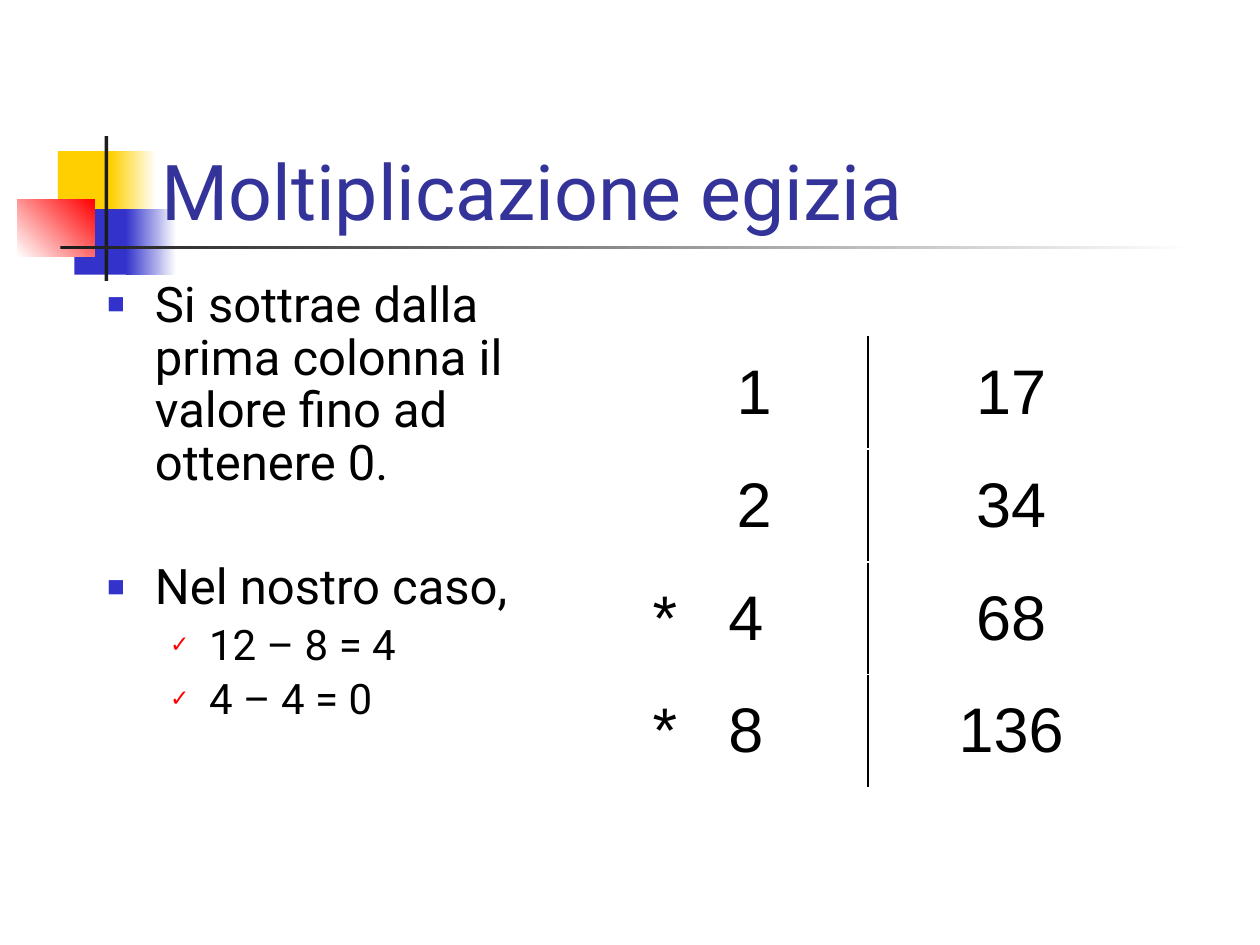
from dataclasses import dataclass
from typing import Optional

from lxml import etree
from pptx import Presentation
from pptx import util as u
from pptx.dml.color import RGBColor
from pptx.enum import shapes, text
from pptx.oxml import ns


@dataclass(frozen=True)
class Theme:
    title: str = "333399"
    ink: str = "000000"
    paper: str = "FFFFFF"
    yellow: str = "FFCF01"
    blue: str = "3333CC"
    red: str = "FF0000"
    dark: str = "1C1C1C"
    font: str = "Roboto"
    table_font: str = "Arial"
    title_size: int = 44
    body_size: int = 28
    sub_size: int = 24
    table_size: int = 36


T = Theme()


@dataclass(frozen=True)
class Block:
    left: float
    top: float
    width: float
    height: float
    color: str
    fade_to: Optional[str] = None
    angle: int = 0


@dataclass(frozen=True)
class Level:
    size: int
    indent: float
    hang: float
    bullet: str
    color: str
    scale: int


@dataclass(frozen=True)
class Item:
    words: str
    level: int
    before: float


BLOCKS = [
    Block(0.46, 1.2, 0.48, 0.52, T.yellow),
    Block(0.88, 1.2, 0.36, 0.52, T.yellow, T.paper),
    Block(0.59, 1.66, 0.46, 0.52, T.blue),
    Block(1, 1.66, 0.4, 0.52, T.blue, T.paper),
    Block(0.14, 1.58, 0.61, 0.46, T.paper, T.red, 45),
    Block(0.83, 1.08, 0.03, 1.15, T.dark),
    Block(0.48, 1.95, 9, 0.03, T.dark, T.paper),
]
LEVELS = [
    Level(T.body_size, 0.38, 0.38, "■", T.blue, 60),
    Level(T.sub_size, 0.81, 0.31, "✓", T.red, 55),
]
ITEMS = [
    Item("Si sottrae dalla prima colonna il valore fino ad ottenere 0.", 0, 0),
    Item("Nel nostro caso,", 0, 40.5),
    Item("12 – 8 = 4", 1, 5),
    Item("4 – 4 = 0", 1, 5),
]
ROWS = [("1", "17"), ("2", "34"), ("*\t4", "68"), ("*\t8", "136")]
COLUMNS = [1.81, 2.27]


def rgb(color: str) -> RGBColor:
    return RGBColor.from_string(color)


def child(parent, tag: str, **attrs: str):
    return etree.SubElement(parent, ns.qn(tag), attrs)


def place(sp, left: float, top: float, width: float, height: float) -> None:
    sp.left, sp.top = u.Inches(left), u.Inches(top)
    sp.width, sp.height = u.Inches(width), u.Inches(height)


def add_run(p, words: str, font: str, size: int, color: str) -> None:
    r = p.add_run()
    r.text = words
    r.font.name, r.font.size = font, u.Pt(size)
    r.font.color.rgb = rgb(color)


def add_block(s, b: Block) -> None:
    sp = s.shapes.add_shape(shapes.MSO_SHAPE.RECTANGLE, 0, 0, 0, 0)
    place(sp, b.left, b.top, b.width, b.height)
    sp.shadow.inherit = False
    sp.line.fill.background()
    if b.fade_to is None:
        sp.fill.solid()
        sp.fill.fore_color.rgb = rgb(b.color)
        return
    sp.fill.gradient()
    sp.fill.gradient_angle = b.angle
    for stop, color in zip(sp.fill.gradient_stops, (b.color, b.fade_to)):
        stop.color.rgb = rgb(color)


def add_item(p, item: Item) -> None:
    lv = LEVELS[item.level]
    p.level = item.level
    p.line_spacing, p.space_before = 0.9, u.Pt(item.before)
    pPr = p._p.get_or_add_pPr()
    pPr.set("marL", str(u.Inches(lv.indent)))
    pPr.set("indent", str(-u.Inches(lv.hang)))
    child(child(pPr, "a:buClr"), "a:srgbClr", val=lv.color)
    child(pPr, "a:buSzPct", val=str(lv.scale * 1000))
    child(pPr, "a:buChar", char=lv.bullet)
    add_run(p, item.words, T.font, lv.size, T.ink)


def add_border(cell, side: str) -> None:
    ln = etree.Element(ns.qn(side), w=str(u.Pt(1)))
    child(child(ln, "a:solidFill"), "a:srgbClr", val=T.ink)
    cell._tc.get_or_add_tcPr().insert(0, ln)


def fill_cell(cell, words: str, side: str) -> None:
    cell.fill.solid()
    cell.fill.fore_color.rgb = rgb(T.paper)
    cell.vertical_anchor = text.MSO_ANCHOR.MIDDLE
    add_border(cell, side)
    p = cell.text_frame.paragraphs[0]
    starred = "\t" in words
    p.alignment = text.PP_ALIGN.LEFT if starred else text.PP_ALIGN.CENTER
    if starred:
        tabs = child(p._p.get_or_add_pPr(), "a:tabLst")
        child(tabs, "a:tab", pos=str(u.Inches(0.6)), algn="l")
    add_run(p, words, T.table_font, T.table_size, T.ink)


def add_products(s) -> None:
    frame = s.shapes.add_table(len(ROWS), len(COLUMNS), u.Inches(5.08), u.Inches(2.67),
                               u.Inches(sum(COLUMNS)), u.Inches(3.58))
    table = frame.table
    table.first_row = table.horz_banding = False
    for column, width in zip(table.columns, COLUMNS):
        column.width = u.Inches(width)
    for i, row in enumerate(ROWS):
        for j, side in enumerate(("a:lnR", "a:lnL")):
            fill_cell(table.cell(i, j), row[j], side)


def main() -> None:
    prs = Presentation()
    prs.slide_width, prs.slide_height = u.Inches(10), u.Inches(7.5)
    s = prs.slides.add_slide(prs.slide_layouts[1])
    title, body = s.shapes.title, s.placeholders[1]

    # Corner decoration, behind the placeholders
    for block in BLOCKS:
        add_block(s, block)
    for sp in (title, body):
        s.shapes.element.append(sp.element)

    # Title, indented past the decoration
    place(title, 0.75, 0.67, 8.5, 1.25)
    tf = title.text_frame
    tf.auto_size = text.MSO_AUTO_SIZE.NONE
    tf.vertical_anchor = text.MSO_ANCHOR.BOTTOM
    tf.margin_left = u.Inches(0.53)
    p = tf.paragraphs[0]
    p.alignment = text.PP_ALIGN.LEFT
    add_run(p, "Moltiplicazione egizia", T.font, T.title_size, T.title)

    # Bulleted explanation
    place(body, 0.75, 2.17, 4.17, 4.5)
    tf = body.text_frame
    tf.auto_size = text.MSO_AUTO_SIZE.NONE
    for i, item in enumerate(ITEMS):
        add_item(tf.add_paragraph() if i else tf.paragraphs[0], item)

    # Doubling table
    add_products(s)
    prs.save("out.pptx")


if __name__ == "__main__":
    main()
